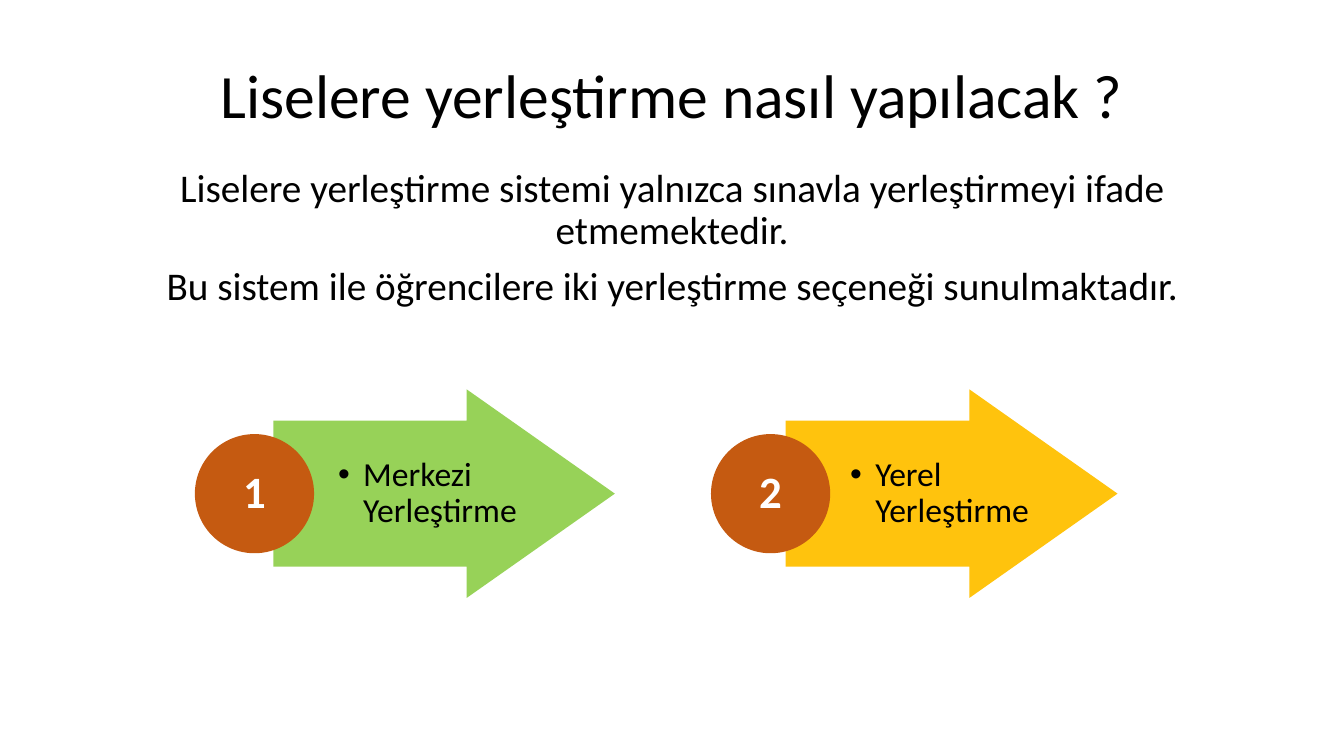
"""Build the slide on how placement into high schools works."""
from lxml.etree import SubElement
from pptx import Presentation
from pptx.dml.color import RGBColor
from pptx.enum.shapes import MSO_SHAPE
from pptx.enum.text import MSO_ANCHOR, PP_ALIGN
from pptx.oxml.ns import qn
from pptx.util import Inches, Pt

WIDTH, HEIGHT = 13.33, 7.5
MIDDLE = 65.3
SHAFT, HEAD = 0.7, 0.71


def color(hex_code):
    """Turn a hex string into a colour."""
    return RGBColor.from_string(hex_code)


def place(left, top, width, height):
    """Turn percentages of the slide into lengths."""
    return (Inches(WIDTH * left / 100), Inches(HEIGHT * top / 100),
            Inches(WIDTH * width / 100), Inches(HEIGHT * height / 100))


def write(frame, lines, size, ink="000000", bold=False,
          align=PP_ALIGN.CENTER, before=0):
    """Fill a text frame with one paragraph per line."""
    frame.word_wrap = True
    for index, line in enumerate(lines):
        paragraph = frame.add_paragraph() if index else frame.paragraphs[0]
        paragraph.alignment = align
        paragraph.line_spacing = 0.9
        paragraph.space_before = Pt(before)
        run = paragraph.add_run()
        run.text = line
        run.font.name = "Calibri"
        run.font.size = Pt(size)
        run.font.bold = bold
        run.font.color.rgb = color(ink)


def add_text(slide, area, lines, size, anchor, before=0):
    """Add a centred block of text."""
    frame = slide.shapes.add_textbox(*place(*area)).text_frame
    frame.vertical_anchor = anchor
    write(frame, lines, size, before=before)


def add_filled(slide, preset, area, fill, margins):
    """Add a flat shape without outline."""
    shape = slide.shapes.add_shape(preset, *place(*area))
    shape.shadow.inherit = False
    shape.fill.solid()
    shape.fill.fore_color.rgb = color(fill)
    shape.line.fill.background()
    frame = shape.text_frame
    frame.vertical_anchor = MSO_ANCHOR.MIDDLE
    frame.margin_left, frame.margin_right = map(Inches, margins)
    frame.margin_top = frame.margin_bottom = 0
    return shape


def add_arrow(slide, left, width, fill, label):
    """Add a slightly transparent arrow with a bulleted label."""
    height = 27.6
    arrow = add_filled(slide, MSO_SHAPE.RIGHT_ARROW,
                       (left, MIDDLE - height / 2, width, height),
                       fill, (0.64, -0.2))
    arrow.adjustments[0], arrow.adjustments[1] = SHAFT, HEAD
    tint = arrow.fill._xPr.find(qn("a:solidFill"))[0]
    SubElement(tint, qn("a:alpha"), val="95000")
    write(arrow.text_frame, [label], 24, align=PP_ALIGN.LEFT)
    properties = arrow.text_frame.paragraphs[0]._p.get_or_add_pPr()
    properties.set("marL", str(Inches(0.25)))
    properties.set("indent", str(Inches(-0.25)))
    SubElement(properties, qn("a:buFont"), typeface="Arial")
    SubElement(properties, qn("a:buChar"), char="•")


def add_number(slide, left, number):
    """Add a numbered circle."""
    width = 8.87
    height = width * WIDTH / HEIGHT
    circle = add_filled(slide, MSO_SHAPE.OVAL,
                        (left, MIDDLE - height / 2, width, height),
                        "C55A11", (0, 0))
    write(circle.text_frame, [str(number)], 32, "FFFFFF", True)


def main():
    """Build and save the slide."""
    deck = Presentation()
    deck.slide_width, deck.slide_height = Inches(WIDTH), Inches(HEIGHT)
    slide = deck.slides.add_slide(deck.slide_layouts[6])
    add_text(slide, (6.88, 5.33, 86.25, 15.33),
             ["Liselere yerleştirme nasıl yapılacak ?"], 44, MSO_ANCHOR.MIDDLE)
    add_text(slide, (6.88, 21.6, 86.25, 68.4),
             ["Liselere yerleştirme sistemi yalnızca sınavla yerleştirmeyi "
              "ifade etmemektedir.",
              "Bu sistem ile öğrencilere iki yerleştirme seçeneği "
              "sunulmaktadır."], 28, MSO_ANCHOR.TOP, before=10)
    options = [(14.5, 20.35, 25.4, "92D050", "Merkezi Yerleştirme"),
               (52.9, 58.45, 24.7, "FFC000", "Yerel Yerleştirme")]
    for _, left, width, fill, label in options:
        add_arrow(slide, left, width, fill, label)
    for number, (left, *_) in enumerate(options, 1):
        add_number(slide, left, number)


    deck.save("out.pptx")


if __name__ == "__main__":
    main()
